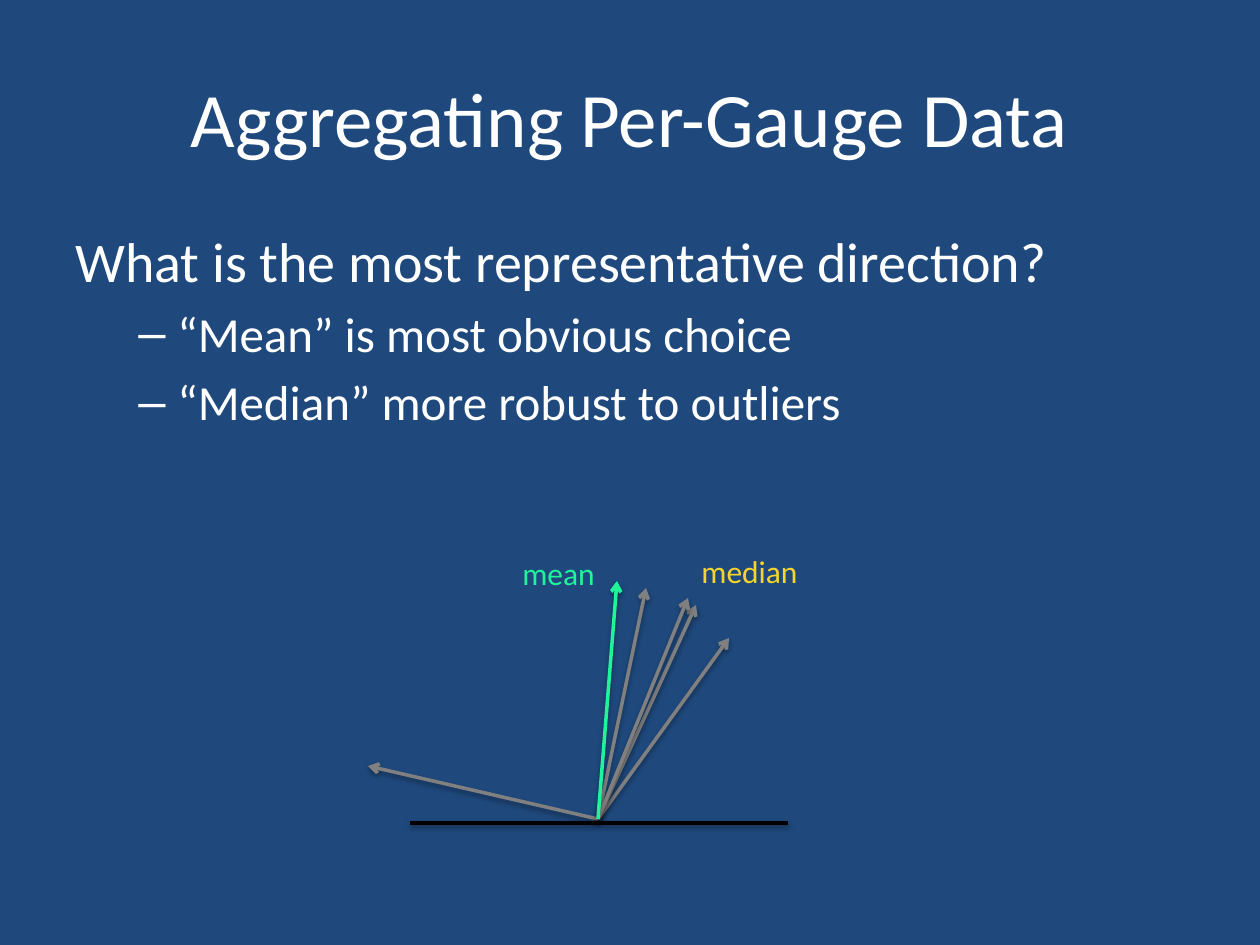
from lxml import etree
from pptx import Presentation
from pptx.dml.color import RGBColor
from pptx.enum.shapes import MSO_CONNECTOR as Connector
from pptx.enum.text import MSO_ANCHOR as Anchor, MSO_AUTO_SIZE as AutoSize, PP_ALIGN as Align
from pptx.oxml import parse_xml
from pptx.oxml.ns import nsdecls, qn
from pptx.util import Pt

# Content, lengths in px
WIDTH, HEIGHT = 1260, 945
EMU_PER_PX = 914400 / 126
FONT = "Calibri"
BACKGROUND, WHITE, BLACK, GRAY = "1F497D", "FFFFFF", "000000", "808080"
MEAN_COLOR, MEDIAN_COLOR = "1FF49B", "F4D62A"

TITLE = "Aggregating Per-Gauge Data"
TITLE_BOX = (63, 38, 1134, 157)
BODY_BOX = (63, 220, 1134, 624)
# text, size, left margin, hanging indent, bullet
BODY = [
    ("What is the most representative direction?", 32, 47, 47, None),
    ("“Mean” is most obvious choice", 28, 102, 39, "–"),
    ("“Median” more robust to outliers", 28, 102, 39, "–"),
]
GAUGE_FOOT = (598, 819)
GAUGE_TIPS = [(646, 588), (729, 638), (696, 605), (368, 766), (688, 598)]
MEAN_TIP = (617, 581)
GROUND = ((410, 823), (788, 823))
LABELS = [
    ("mean", (510, 548, 98, 51), MEAN_COLOR),
    ("median", (689, 546, 122, 51), MEDIAN_COLOR),
]


def px(length):
    return round(length * EMU_PER_PX)


def color(value):
    return RGBColor.from_string(value)


def add_text_frame(box, wrap=True):
    frame = slide.shapes.add_textbox(*map(px, box)).text_frame
    frame.word_wrap = wrap
    return frame


def add_run(paragraph, text, size, text_color=WHITE):
    run = paragraph.add_run()
    run.text = text
    run.font.name = FONT
    run.font.size = Pt(size)
    run.font.color.rgb = color(text_color)


def add_line(start, end, line_color, arrow=True):
    connector = slide.shapes.add_connector(Connector.STRAIGHT, *map(px, start + end))
    connector.line.width = Pt(2)
    connector.line.color.rgb = color(line_color)
    properties = connector._element.spPr
    if arrow:
        etree.SubElement(properties.find(qn("a:ln")), qn("a:tailEnd"), type="arrow")
    properties.append(parse_xml(
        f'<a:effectLst {nsdecls("a")}>'
        '<a:outerShdw blurRad="40000" dist="20000" dir="5400000" rotWithShape="0">'
        f'<a:srgbClr val="{BLACK}"><a:alpha val="38000"/></a:srgbClr>'
        '</a:outerShdw></a:effectLst>'))


presentation = Presentation()
presentation.slide_width, presentation.slide_height = px(WIDTH), px(HEIGHT)
slide = presentation.slides.add_slide(presentation.slide_layouts[6])
slide.background.fill.solid()
slide.background.fill.fore_color.rgb = color(BACKGROUND)

# Title
frame = add_text_frame(TITLE_BOX)
frame.vertical_anchor = Anchor.MIDDLE
frame.paragraphs[0].alignment = Align.CENTER
add_run(frame.paragraphs[0], TITLE, 44)

# Question and its two answers
frame = add_text_frame(BODY_BOX)
for index, (text, size, margin, hanging, bullet) in enumerate(BODY):
    paragraph = frame.add_paragraph() if index else frame.paragraphs[0]
    properties = paragraph._p.get_or_add_pPr()
    properties.set("marL", str(px(margin)))
    properties.set("indent", str(-px(hanging)))
    if bullet:
        properties.set("lvl", "1")
        etree.SubElement(properties, qn("a:buFont"), typeface="Arial")
        etree.SubElement(properties, qn("a:buChar"), char=bullet)
    else:
        etree.SubElement(properties, qn("a:buNone"))
    if index:
        paragraph.space_before = Pt(size * 0.2)
    add_run(paragraph, text, size)

# Gauge directions, ground line and mean direction
for tip in GAUGE_TIPS:
    add_line(GAUGE_FOOT, tip, GRAY)
add_line(*GROUND, BLACK, arrow=False)
add_line(GAUGE_FOOT, MEAN_TIP, MEAN_COLOR)

# Labels
for text, box, label_color in LABELS:
    frame = add_text_frame(box, wrap=False)
    frame.auto_size = AutoSize.SHAPE_TO_FIT_TEXT
    add_run(frame.paragraphs[0], text, 18, label_color)

presentation.save("out.pptx")
